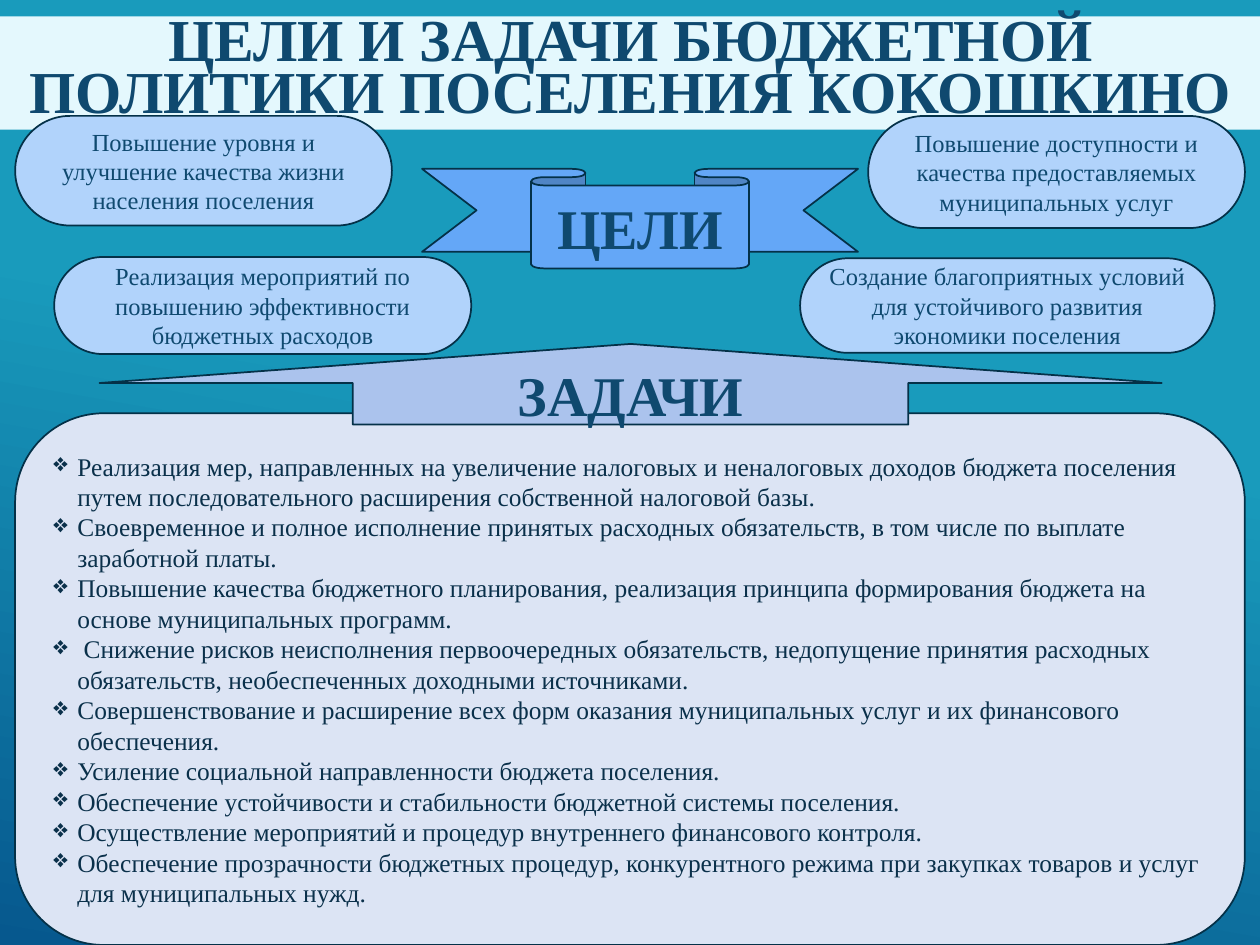
from lxml import etree
from pptx import Presentation
from pptx.dml.color import RGBColor
from pptx.enum.shapes import MSO_SHAPE
from pptx.enum.text import MSO_ANCHOR, MSO_AUTO_SIZE, PP_ALIGN
from pptx.oxml.ns import qn
from pptx.util import Inches, Pt

ROUND = MSO_SHAPE.ROUNDED_RECTANGLE
ARROW = MSO_SHAPE.UP_ARROW
RIBBON = MSO_SHAPE.DOWN_RIBBON
MIDDLE = MSO_ANCHOR.MIDDLE
NO_FIT = MSO_AUTO_SIZE.NONE
CENTER, LEFT = PP_ALIGN.CENTER, PP_ALIGN.LEFT

TEAL = RGBColor(0x19, 0x9B, 0xBC)
DEEP_BLUE = RGBColor(0x06, 0x58, 0x8E)
TITLE_BAND = RGBColor(0xE4, 0xF8, 0xFD)
PANEL = RGBColor(0xDC, 0xE4, 0xF4)
ARROW_FILL = RGBColor(0xAB, 0xC3, 0xED)
PILL = RGBColor(0xB1, 0xD3, 0xFB)
RIBBON_FILL = RGBColor(0x64, 0xA7, 0xF7)
OUTLINE = RGBColor(0x04, 0x31, 0x48)
HEADING = RGBColor(0x0F, 0x49, 0x6F)
BODY = RGBColor(0x0A, 0x30, 0x4A)
FONT = "Times New Roman"

GOALS = [
    ("Повышение уровня и улучшение качества жизни населения поселения",
     (0.12, 0.92, 2.99, 0.87)),
    ("Повышение доступности и качества предоставляемых муниципальных услуг",
     (6.89, 0.92, 2.99, 0.89)),
    ("Создание благоприятных условий для устойчивого развития экономики поселения",
     (6.35, 2.05, 3.29, 0.75)),
    ("Реализация мероприятий по повышению эффективности бюджетных расходов",
     (0.43, 2.04, 3.31, 0.77)),
]
TASKS = [
    "Реализация мер, направленных на увеличение налоговых и неналоговых доходов бюджета "
    "поселения путем последовательного расширения собственной налоговой базы.",
    "Своевременное и полное исполнение принятых расходных обязательств, в том числе "
    "по выплате заработной платы.",
    "Повышение качества бюджетного планирования, реализация принципа формирования "
    "бюджета на основе муниципальных программ.",
    " Снижение рисков неисполнения первоочередных обязательств, недопущение принятия "
    "расходных обязательств, необеспеченных доходными источниками.",
    "Совершенствование и расширение всех форм оказания муниципальных услуг "
    "и их финансового обеспечения.",
    "Усиление социальной направленности бюджета поселения.",
    "Обеспечение устойчивости и стабильности бюджетной системы поселения.",
    "Осуществление мероприятий и процедур внутреннего финансового контроля.",
    "Обеспечение прозрачности бюджетных процедур, конкурентного режима при закупках "
    "товаров и услуг для муниципальных нужд.",
]


def set_text(sp, text, size, color, bold=False, align=CENTER):
    """Fill a shape with text, one paragraph per line, in a single style."""
    tf = sp.text_frame
    tf.text = text
    tf.word_wrap = True
    tf.auto_size = NO_FIT
    tf.vertical_anchor = MIDDLE
    for p in tf.paragraphs:
        p.alignment = align
        for r in p.runs:
            r.font.name = FONT
            r.font.size = Pt(size)
            r.font.bold = bold
            r.font.color.rgb = color


def add_outlined(kind, box, fill, adjustments=()):
    sp = s.shapes.add_shape(kind, *(Inches(v) for v in box))
    sp.shadow.inherit = False
    sp.fill.solid()
    sp.fill.fore_color.rgb = fill
    sp.line.color.rgb = OUTLINE
    sp.line.width = Pt(1)
    for i, value in enumerate(adjustments):
        sp.adjustments[i] = value
    return sp


prs = Presentation()
prs.slide_width, prs.slide_height = Inches(10), Inches(7.5)
s = prs.slides.add_slide(prs.slide_layouts[5])

# Background gradient
bg = s.background.fill
bg.gradient()
bg.gradient_angle = 260
for stop, (position, color) in zip(bg.gradient_stops, [(0.41, TEAL), (1, DEEP_BLUE)]):
    stop.position = position
    stop.color.rgb = color

# Title band
title = s.shapes.title
title.left, title.top = Inches(0), Inches(0.13)
title.width, title.height = Inches(10.01), Inches(0.9)
title.fill.solid()
title.fill.fore_color.rgb = TITLE_BAND
set_text(title, "ЦЕЛИ И ЗАДАЧИ БЮДЖЕТНОЙ ПОЛИТИКИ ПОСЕЛЕНИЯ КОКОШКИНО", 34, HEADING, bold=True)
title.text_frame.paragraphs[0].line_spacing = Pt(30)

# Task list
panel = add_outlined(ROUND, (0.12, 3.28, 9.76, 4.22), PANEL)
set_text(panel, "\n".join(TASKS), 14.5, BODY, align=LEFT)
for p in panel.text_frame.paragraphs:
    pPr = p._p.get_or_add_pPr()
    pPr.set("marL", str(Inches(0.19)))
    pPr.set("indent", str(Inches(-0.19)))
    etree.SubElement(pPr, qn("a:buChar")).set("char", "❖")

arrow = add_outlined(ARROW, (0.79, 2.73, 8.43, 0.64), ARROW_FILL, (0.523, 0.485))
set_text(arrow, "ЗАДАЧИ", 32, HEADING, bold=True)

# Goals around the ribbon
for text, box in GOALS:
    set_text(add_outlined(ROUND, box, PILL, (0.5,)), text, 14, HEADING)

ribbon = add_outlined(RIBBON, (3.35, 1.34, 3.46, 0.79), RIBBON_FILL)
set_text(ribbon, "ЦЕЛИ", 32, HEADING, bold=True)

prs.save("out.pptx")
